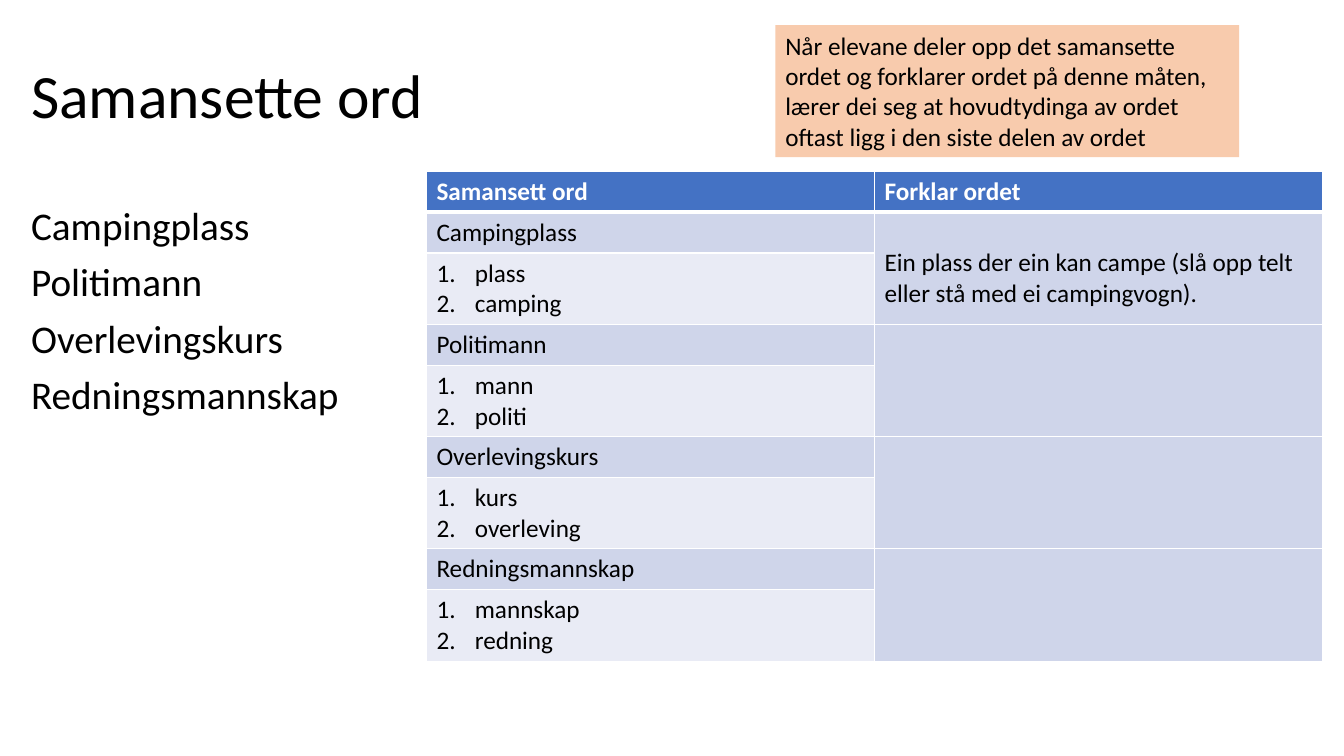
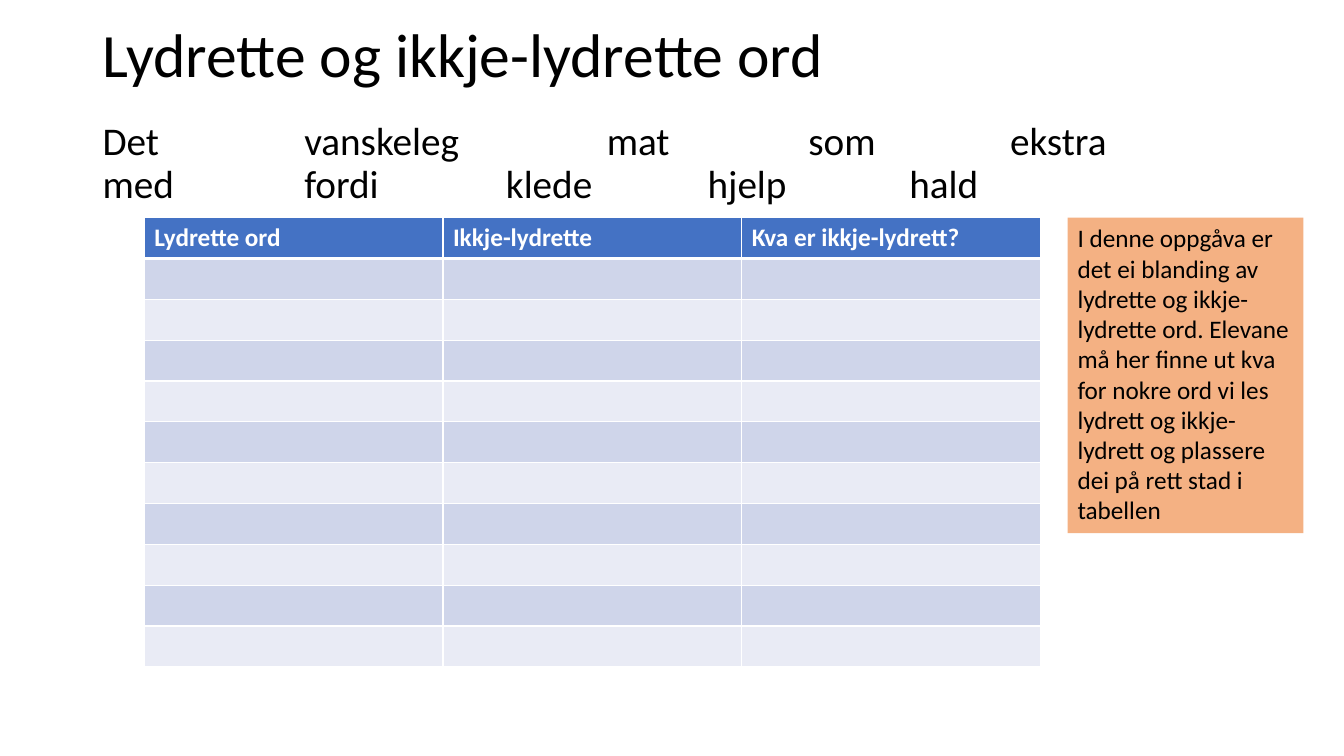
from pptx import Presentation
from pptx.dml.color import RGBColor as Rgb
from pptx.enum.shapes import MSO_SHAPE as Shape
from pptx.enum.text import MSO_ANCHOR as Anchor, PP_ALIGN as Align
from pptx.oxml.ns import qn
from pptx.util import Inches, Pt
from lxml.etree import SubElement as Sub

FONT = "Calibri"
COLORS = {
    "text": "000000", "white": "FFFFFF", "head": "4472C4",
    "dark": "CFD5EA", "light": "E9EBF5",
    "peach": "F8CBAD", "orange": "F4B183",
}

prs = Presentation()
prs.slide_width, prs.slide_height = Inches(13.33), Inches(7.5)


def share(box):
    """Turn left, top, width, height in percent of the slide into lengths."""
    sides = (prs.slide_width, prs.slide_height) * 2
    return [int(side * part / 100) for side, part in zip(sides, box)]


def color(name):
    return Rgb.from_string(COLORS[name])


def paint(part, name):
    part.fill.solid()
    part.fill.fore_color.rgb = color(name)


def write(frame, text, size=18, ink="text", bold=False):
    frame.text = text
    for para in frame.paragraphs:
        for run in para.runs:
            font = run.font
            font.name, font.size, font.bold = FONT, Pt(size), bold
            font.color.rgb = color(ink)


# Text parts
def add_text(slide, box, text, size, anchor=Anchor.TOP, space=0):
    frame = slide.shapes.add_textbox(*share(box)).text_frame
    frame.word_wrap = True
    frame.vertical_anchor = anchor
    write(frame, text, size)
    for para in frame.paragraphs:
        para.line_spacing = 0.9
        para.space_before = Pt(space)
    return frame


def add_title(slide, left, top, text):
    add_text(slide, (left, top, 86.27, 19.33), text, 44, Anchor.MIDDLE)


def add_body(slide, box, text):
    return add_text(slide, box, text, 28, space=10)


def add_note(slide, box, text, fill):
    note = slide.shapes.add_shape(Shape.RECTANGLE, *share(box))
    note.shadow.inherit = False
    note.line.fill.background()
    paint(note, fill)
    frame = note.text_frame
    frame.word_wrap = True
    frame.vertical_anchor = Anchor.TOP
    write(frame, text)
    for para in frame.paragraphs:
        para.alignment = Align.LEFT


def set_tabs(para, count):
    """Put one tab stop at every inch."""
    stops = Sub(para._p.get_or_add_pPr(), qn("a:tabLst"))
    for inch in range(1, count + 1):
        Sub(stops, qn("a:tab"), pos=str(Inches(inch)), algn="l")


def number(frame):
    for para in frame.paragraphs:
        props = para._p.get_or_add_pPr()
        props.set("marL", str(Inches(0.38)))
        props.set("indent", str(-Inches(0.38)))
        Sub(props, qn("a:buFont"), typeface="+mj-lt")
        Sub(props, qn("a:buAutoNum"), type="arabicPeriod")


# Table parts
def edge(cell, base):
    props = cell._tc.get_or_add_tcPr()
    for spot, (side, width) in enumerate(zip("LRTB", (1, 1, 1, base))):
        line = Sub(props, qn("a:ln" + side), w=str(Pt(width)))
        props.insert(spot, line)
        fill = Sub(line, qn("a:solidFill"))
        Sub(fill, qn("a:srgbClr"), val=COLORS["white"])


def add_grid(slide, box, heads, weights):
    """Draw a banded table whose row heights follow the weights."""
    left, top, width, height = share(box)
    table = slide.shapes.add_table(
        len(weights), len(heads), left, top, width, height).table
    for col in table.columns:
        col.width = width // len(heads)
    for index, (row, weight) in enumerate(zip(table.rows, weights)):
        row.height = int(height * weight / sum(weights))
        band = "dark" if index % 2 else "light"
        for cell in row.cells:
            paint(cell, band if index else "head")
            edge(cell, 1 if index else 3)
    for cell, head in zip(table.rows[0].cells, heads):
        write(cell.text_frame, head, ink="white", bold=True)
    return table


# Slide 1: compound words
def add_compounds(slide):
    words = {
        "Campingplass": ("plass", "camping"),
        "Politimann": ("mann", "politi"),
        "Overlevingskurs": ("kurs", "overleving"),
        "Redningsmannskap": ("mannskap", "redning"),
    }
    add_title(slide, 1.58, 3.33, "Samansette ord")
    add_body(slide, (1.58, 26.67, 25.96, 63.47), "\n".join(words))
    table = add_grid(slide, (31.73, 22.67, 66.69, 64.8),
                     ("Samansett ord", "Forklar ordet"),
                     [1] + [1, 1.75] * len(words))
    for index, (word, parts) in enumerate(words.items()):
        row = 2 * index + 1
        write(table.cell(row, 0).text_frame, word)
        frame = table.cell(row + 1, 0).text_frame
        write(frame, "\n".join(parts))
        number(frame)
        table.cell(row, 1).merge(table.cell(row + 1, 1))
    first = table.cell(1, 1)
    first.margin_top = Inches(0.35)
    write(first.text_frame, "Ein plass der ein kan campe (slå opp telt "
          "eller stå med ei campingvogn).")
    add_note(slide, (57.69, 3.33, 34.51, 17.47),
             "Når elevane deler opp det samansette ordet og forklarer ordet "
             "på denne måten, lærer dei seg at hovudtydinga av ordet oftast "
             "ligg i den siste delen av ordet", "peach")


# Slide 2: words spelled as they sound, or not
def add_sounds(slide):
    lines = (("Det", "vanskeleg", "mat", "som", "ekstra"),
             ("med", "fordi", "klede", "hjelp", "hald"))
    add_title(slide, 6.9, -2, "Lydrette og ikkje-lydrette ord")
    frame = add_body(slide, (6.9, 15.47, 86.27, 63.47),
                     " \t".join(" \t\t".join(line) for line in lines))
    set_tabs(frame.paragraphs[0], 11)
    add_grid(slide, (10.73, 28.8, 66.69, 59.47),
             ("Lydrette ord", "Ikkje-lydrette", "Kva er ikkje-lydrett?"),
             [1] * 11)
    add_note(slide, (79.44, 28.8, 17.55, 41.73),
             "I denne oppgåva er det ei blanding av lydrette og "
             "ikkje-lydrette ord. Elevane må her finne ut kva for nokre ord "
             "vi les lydrett og ikkje-lydrett og plassere dei på rett stad i "
             "tabellen", "orange")


def main():
    for build in (add_compounds, add_sounds):
        build(prs.slides.add_slide(prs.slide_layouts[6]))
    prs.save("out.pptx")


if __name__ == "__main__":
    main()
